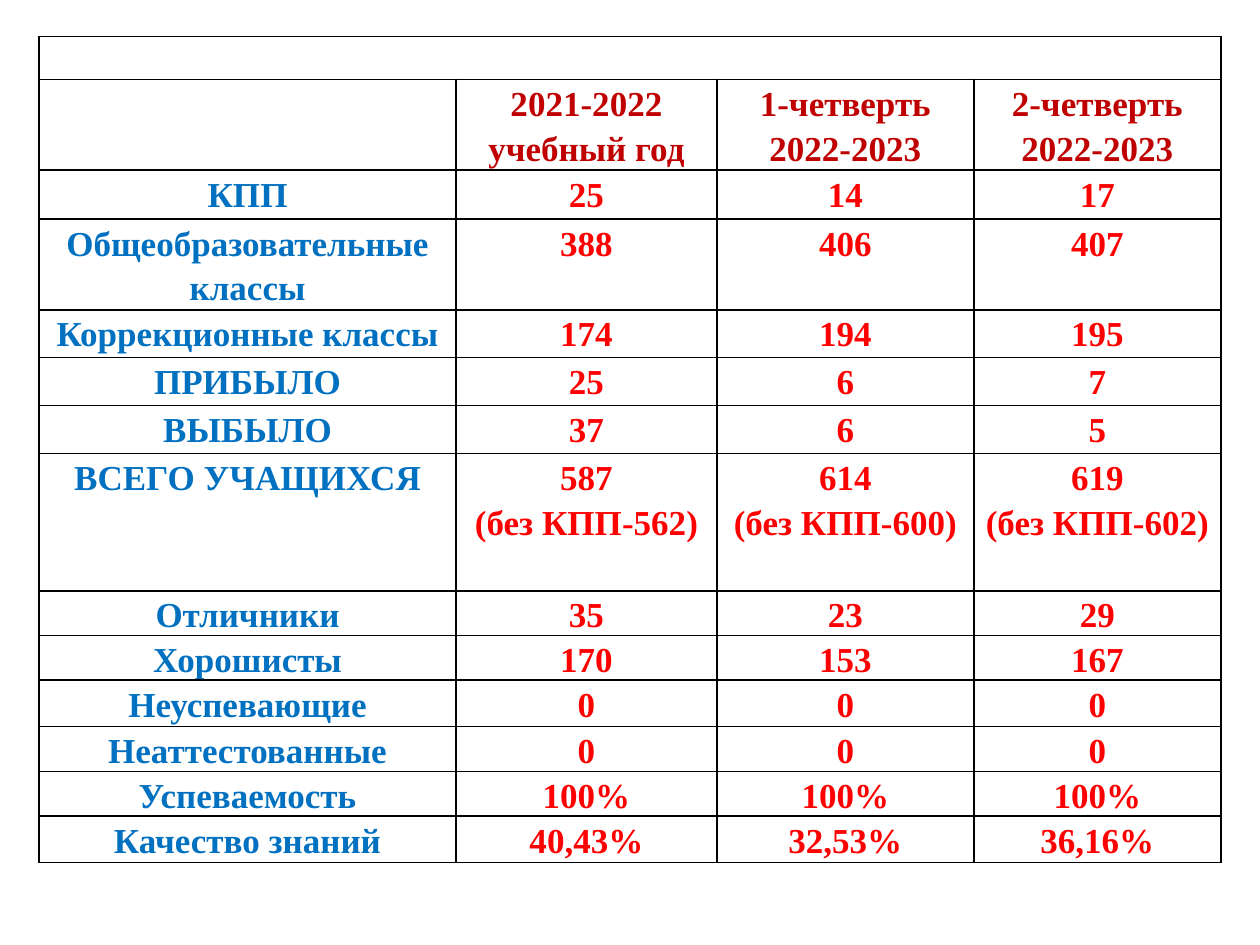
from lxml.etree import SubElement
from pptx import Presentation
from pptx.dml.color import RGBColor
from pptx.enum.text import PP_ALIGN
from pptx.oxml.ns import qn
from pptx.util import Inches, Pt

COLORS = {"border": "000000", "heading": "C00000", "label": "0070C0", "value": "FF0000"}
FONT = "Times New Roman"
COLUMN_WIDTHS = [3.31, 2.07, 2.04, 1.96]
ROW_HEIGHTS = [0.34, 0.72, 0.39, 0.72, 0.38, 0.38, 0.38,
               1.09, 0.34, 0.34, 0.37, 0.34, 0.34, 0.37]
HEADINGS = ["", "2021-2022 учебный год", "1-четверть 2022-2023", "2-четверть 2022-2023"]
RESULTS = [
    ["КПП", "25", "14", "17"],
    ["Общеобразовательные классы", "388", "406", "407"],
    ["Коррекционные классы", "174", "194", "195"],
    ["ПРИБЫЛО", "25", "6", "7"],
    ["ВЫБЫЛО", "37", "6", "5"],
    ["ВСЕГО УЧАЩИХСЯ", "587\n(без КПП-562)", "614\n(без КПП-600)", "619\n(без КПП-602)"],
    ["Отличники", "35", "23", "29"],
    ["Хорошисты", "170", "153", "167"],
    ["Неуспевающие", "0", "0", "0"],
    ["Неаттестованные", "0", "0", "0"],
    ["Успеваемость", "100%", "100%", "100%"],
    ["Качество знаний", "40,43%", "32,53%", "36,16%"],
]


def write_text(frame, text, *, color, size=20, bold=True, spacing=1.15):
    for index, line in enumerate(text.split("\n")):
        para = frame.paragraphs[0] if index == 0 else frame.add_paragraph()
        para.alignment = PP_ALIGN.CENTER
        para.line_spacing = spacing
        if line:
            span = para.add_run()
            span.text = line
            span.font.name = FONT
            span.font.size = Pt(size)
            span.font.bold = bold
            span.font.color.rgb = RGBColor.from_string(COLORS[color])


def style_cell(cell):
    """Clear the fill, set the margins and draw all four borders."""
    cell.margin_left = cell.margin_right = Inches(0.07)
    cell.margin_top = cell.margin_bottom = 0
    properties = cell._tc.get_or_add_tcPr()
    for side in ("a:lnL", "a:lnR", "a:lnT", "a:lnB"):
        line = SubElement(properties, qn(side), w=str(Pt(1)))
        fill = SubElement(line, qn("a:solidFill"))
        SubElement(fill, qn("a:srgbClr"), val=COLORS["border"])
    cell.fill.background()


def add_results_table(page, left, top, width, height):
    table = page.shapes.add_table(len(ROW_HEIGHTS), len(COLUMN_WIDTHS),
                                  left, top, width, height).table
    table.first_row = table.horz_banding = False
    for column, column_width in zip(table.columns, COLUMN_WIDTHS):
        column.width = Inches(column_width)
    for row, row_height in zip(table.rows, ROW_HEIGHTS):
        row.height = Inches(row_height)
    for cell in table.iter_cells():
        style_cell(cell)
    table.cell(0, 0).merge(table.cell(0, len(COLUMN_WIDTHS) - 1))

    for row_index, texts in enumerate([HEADINGS] + RESULTS, start=1):
        for column_index, text in enumerate(texts):
            if row_index == 1:
                color = "heading"
            else:
                color = "value" if column_index else "label"
            write_text(table.cell(row_index, column_index).text_frame, text, color=color)


def main():
    deck = Presentation()
    deck.slide_width, deck.slide_height = Inches(10), Inches(7.5)
    page = deck.slides.add_slide(deck.slide_layouts[6])
    add_results_table(page, Inches(0.31), Inches(0.29),
                      Inches(sum(COLUMN_WIDTHS)), Inches(sum(ROW_HEIGHTS)))
    deck.save("out.pptx")


if __name__ == "__main__":
    main()
